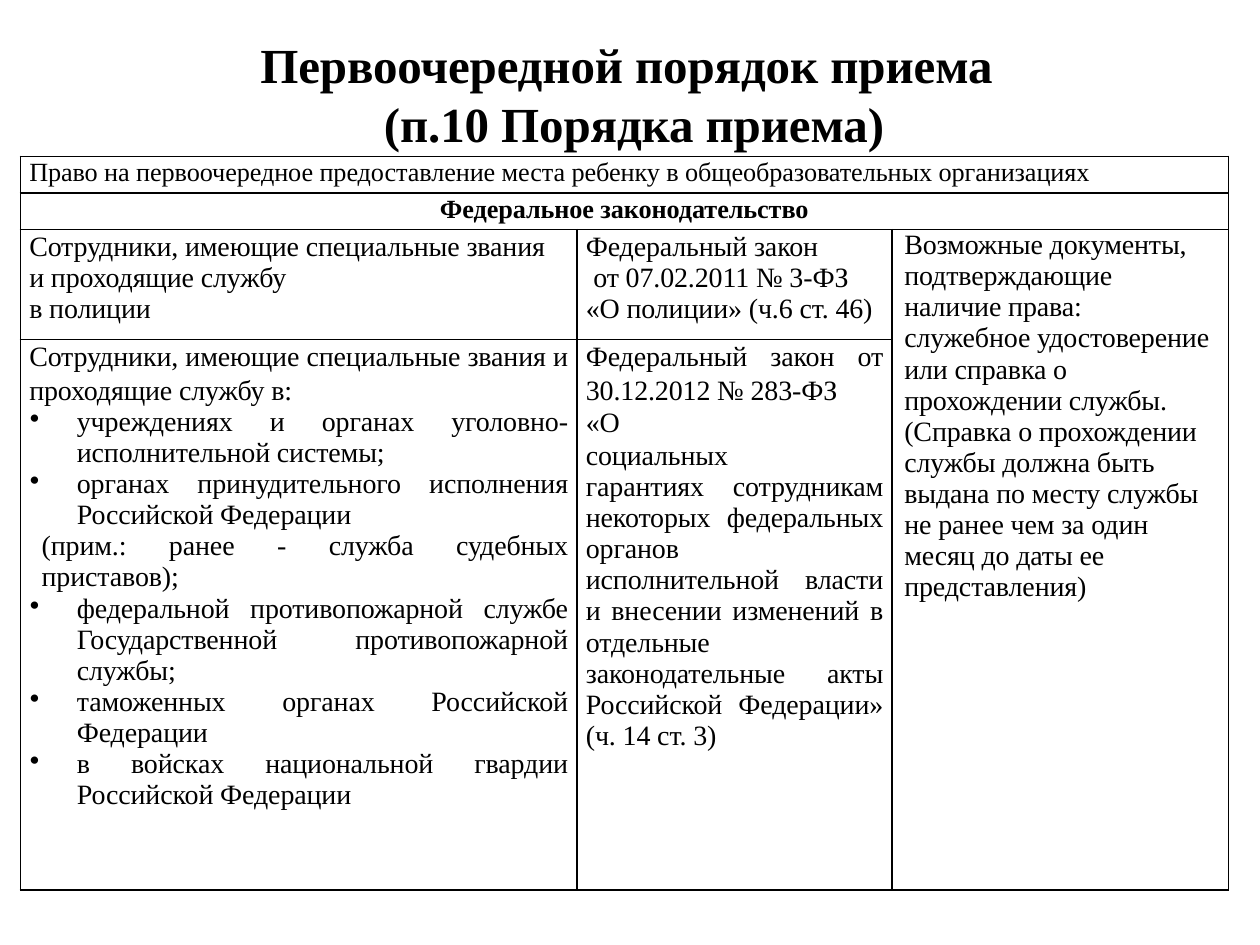
"""Build the slide on priority school admission."""
from dataclasses import dataclass
from typing import Any, Optional

from lxml import etree
from pptx import Presentation, util as u
from pptx.dml.color import RGBColor
from pptx.enum import text as t
from pptx.oxml import ns

INK = {"text": "000000", "rule": "000000"}
FACE = "Times New Roman"
JUST = t.PP_ALIGN.JUSTIFY
MID = t.PP_ALIGN.CENTER


@dataclass
class Para:
    """One paragraph; a line feed in a run stands for a line break."""
    runs: tuple[str, ...]
    left: float = 0.18
    hang: float = 0
    lead: Optional[float] = None
    above: float = 0
    align: Any = t.PP_ALIGN.LEFT
    mark: bool = False


@dataclass
class Box:
    """One table cell with its span and text."""
    row: int
    col: int
    paras: list[Para]
    size: float = 16
    bold: bool = False
    down: int = 1
    wide: int = 1
    right: float = 0


def point(*runs: str) -> Para:
    """Return a justified bullet paragraph."""
    return Para(runs, 1.14, -0.95, align=JUST, mark=True)


def note(*runs: str, above: float = 0) -> Para:
    """Return a paragraph of the document column."""
    return Para(runs, 0.25, above=above)


def law(*runs: str, lead: Optional[float] = None) -> Para:
    """Return a justified paragraph."""
    return Para(runs, lead=lead, align=JUST)


BOXES = [
    Box(0, 0, [Para(("Право на первоочередное предоставление места ребенку в ",
                     "общеобразовательных организациях"), lead=17.6)],
        size=15, wide=3),
    Box(1, 0, [Para(("Федеральное ", "законодательство"), 0, lead=17.6, align=MID)],
        size=15, bold=True, wide=3),
    Box(2, 0, [Para(("Сотрудники, имеющие специальные ", "звания"), lead=18.7),
               Para(("и проходящие ", "службу\n", "в ", "полиции"))]),
    Box(2, 1, [Para(("Федеральный ", "закон"), lead=18.7),
               Para(("от 07.02.2011 № ", "3-ФЗ"), 0.33),
               Para(("«О полиции» (ч.6 ст.", " 46)"))]),
    Box(2, 2, [note("Возможные документы,", above=3.1),
               note("подтверждающие\n", "наличие ", "права:"),
               note("служебное ", "удостоверение\n", "или справка ", "о"),
               note("прохождении ", "службы.\n", "(Справка о ", "прохождении\n",
                    "службы должна ", "быть"),
               note("выдана по месту ", "службы\n", "не ранее чем за", " один"),
               note("месяц до даты ", "ее"),
               note("представления)")], down=2, right=0.1),
    Box(3, 0, [law("Сотрудники, имеющие специальные ", "звания ",
                   "и проходящие службу ", "в:", lead=19.2),
               point("учреждениях и органах ", "уголовно-", "исполнительной системы;"),
               point("органах принудительного ", "исполнения ", "Российской ", "Федерации"),
               Para(("(прим.: ранее - служба ", "судебных приставов);"), 0.43, align=JUST),
               point("федеральной противопожарной ", "службе ",
                     "Государственной ", "противопожарной службы;"),
               point("таможенных органах ", "Российской Федерации"),
               point("в войсках национальной ", "гвардии ", "Российской ", "Федерации")],
        right=0.17),
    Box(3, 1, [law("Федеральный закон ", "от ", "30.12.2012 № ", "283-ФЗ", lead=19.2),
               law("«О\n", "социальных", lead=18.6),
               law("гарантиях ", "сотрудникам ", "некоторых ", "федеральных органов"),
               law("исполнительной ", "власти ", "и внесении изменений ", "в ", "отдельные"),
               law("законодательные ", "акты ", "Российской ", "Федерации» ",
                   "(ч. 14 ст. ", "3)")], right=0.17),
]


def write(frame: Any, paras: list[Para], size: float, bold: bool) -> None:
    """Fill a text frame paragraph by paragraph and run by run."""
    for i, item in enumerate(paras):
        para = frame.add_paragraph() if i else frame.paragraphs[0]
        para.alignment = item.align
        para.space_before = u.Pt(item.above)
        if item.lead:
            para.line_spacing = u.Pt(item.lead)
        props = para._p.get_or_add_pPr()
        props.set("marL", str(u.Cm(item.left)))
        props.set("indent", str(u.Cm(item.hang)))
        if item.mark:
            etree.SubElement(props, ns.qn("a:buChar"), char="•")
        for words in item.runs:
            run = para.add_run()
            run.text = words.rstrip("\n")
            font = run.font
            font.name, font.size, font.bold = FACE, u.Pt(size), bold
            font.color.rgb = RGBColor.from_string(INK["text"])
            run._r.get_or_add_rPr().set("spc", "-5")
            if words.endswith("\n"):
                para.add_line_break()


def edge(cell: Any) -> None:
    """Rule all four sides of a cell."""
    props = cell._tc.get_or_add_tcPr()
    for i, side in enumerate(("lnL", "lnR", "lnT", "lnB")):
        line = etree.Element(ns.qn("a:" + side), w=str(u.Pt(1)))
        fill = etree.SubElement(line, ns.qn("a:solidFill"))
        etree.SubElement(fill, ns.qn("a:srgbClr"), val=INK["rule"])
        props.insert(i, line)


def draw(table: Any, box: Box) -> None:
    """Merge, pad and fill one cell."""
    cell = table.cell(box.row, box.col)
    if box.down * box.wide > 1:
        cell.merge(table.cell(box.row + box.down - 1, box.col + box.wide - 1))
    cell.margin_right = u.Cm(box.right)
    write(cell.text_frame, box.paras, box.size, box.bold)


def main() -> None:
    """Make the slide and save it."""
    deck = Presentation()
    deck.slide_width, deck.slide_height = u.Cm(25.4), u.Cm(19.05)
    slide = deck.slides.add_slide(deck.slide_layouts[5])

    title = slide.shapes.title
    title.left, title.top = u.Cm(5.23), u.Cm(0.69)
    title.width, title.height = u.Cm(14.94), u.Cm(2.44)
    frame = title.text_frame
    frame.margin_left = frame.margin_right = frame.margin_top = frame.margin_bottom = 0
    frame.vertical_anchor = t.MSO_ANCHOR.TOP
    frame.auto_size = t.MSO_AUTO_SIZE.NONE
    frame.word_wrap = True
    write(frame, [Para(("Первоочередной ", "порядок ", "приема ", "(п.10 Порядка ",
                        "приема)"), 2.51, -2.49, above=0.9)], 28, True)

    cols, rows = (11.22, 6.35, 6.78), (0.74, 0.74, 2.21, 11.1)
    table = slide.shapes.add_table(len(rows), len(cols), u.Cm(0.41), u.Cm(3.15),
                                   u.Cm(sum(cols)), u.Cm(sum(rows))).table
    table.first_row = table.horz_banding = False
    for col, width in zip(table.columns, cols):
        col.width = u.Cm(width)
    for row, height in zip(table.rows, rows):
        row.height = u.Cm(height)
    for cell in table.iter_cells():
        cell.margin_left = cell.margin_right = cell.margin_top = cell.margin_bottom = 0
        cell.fill.background()
        edge(cell)
    for box in BOXES:
        draw(table, box)
    deck.save("out.pptx")


if __name__ == "__main__":
    main()
